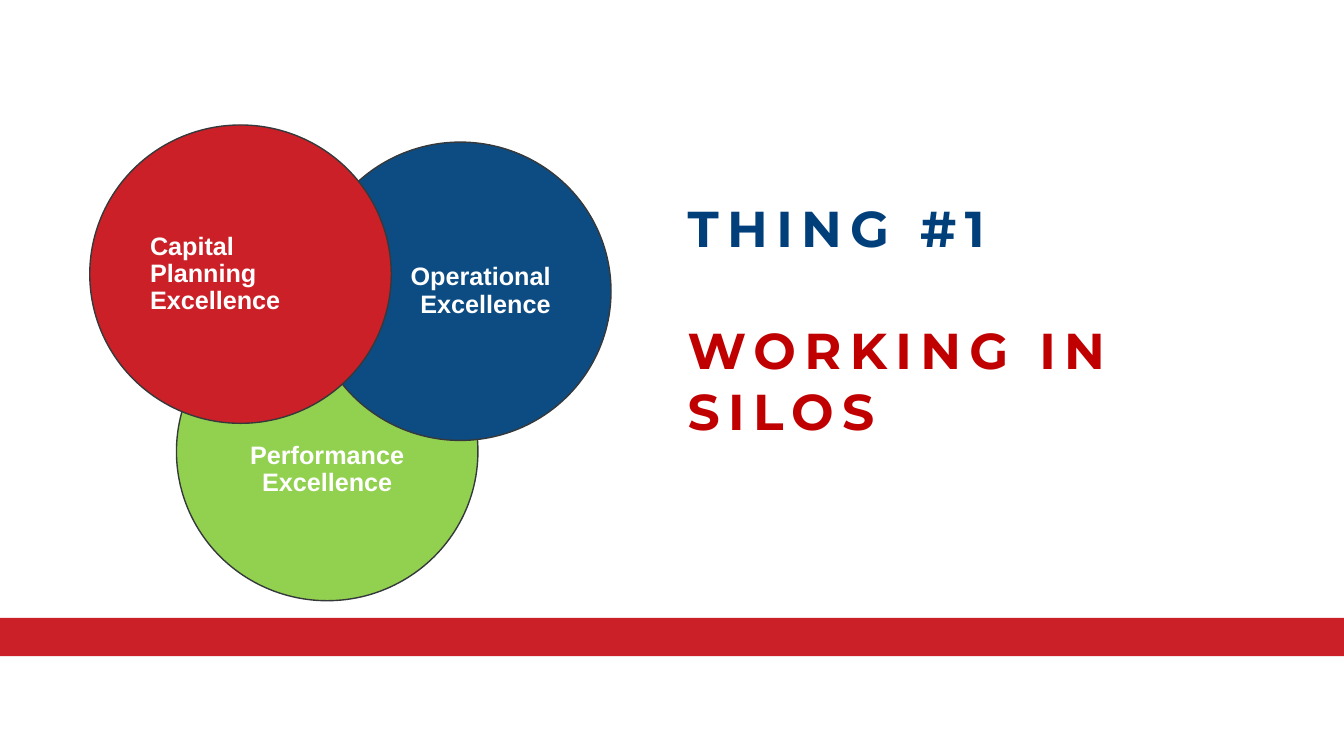
from pptx import Presentation
from pptx.dml.color import RGBColor
from pptx.enum.shapes import MSO_SHAPE
from pptx.enum.text import MSO_ANCHOR, PP_ALIGN
from pptx.util import Inches, Pt

OVAL, RECTANGLE = MSO_SHAPE.OVAL, MSO_SHAPE.RECTANGLE
MIDDLE, BOTTOM = MSO_ANCHOR.MIDDLE, MSO_ANCHOR.BOTTOM
LEFT, CENTER, RIGHT = PP_ALIGN.LEFT, PP_ALIGN.CENTER, PP_ALIGN.RIGHT

RED, OUTLINE, WHITE = "CB2027", "36393B", "FFFFFF"
HEADING = [("THING #1", "013F7A"), ("WORKING IN SILOS", "C00000")]
CIRCLES = [
    ("Performance Excellence", 1.75, 3.0, "92D050", CENTER, 0.37),
    ("Operational Excellence", 3.07, 1.41, "0D4C82", RIGHT, 0),
    ("Capital Planning Excellence", 0.89, 1.24, RED, LEFT, 0),
]
CIRCLE_WIDTH, CIRCLE_HEIGHT, CIRCLE_INSET = 2.99, 2.96, 0.16
HEADING_SIZE, HEADING_GAP = 36, 44


def color(hex_value):
    return RGBColor.from_string(hex_value)


def set_frame(frame, anchor, inset=0, extra_top=0):
    frame.word_wrap = True
    frame.vertical_anchor = anchor
    frame.margin_left = frame.margin_right = frame.margin_bottom = Inches(inset)
    frame.margin_top = Inches(inset + extra_top)


def write(paragraph, text, *, size, font, fill, align=LEFT, line=1.0, before=0, tracking=0):
    paragraph.alignment = align
    paragraph.line_spacing = line
    if before:
        paragraph.space_before = Pt(before)
    run = paragraph.add_run()
    run.text = text
    run.font.size = Pt(size)
    run.font.name = font
    run.font.bold = True
    run.font.color.rgb = color(fill)
    if tracking:
        run._r.get_or_add_rPr().set("spc", str(tracking * 100))


def add_filled(slide, kind, left, top, width, height, fill, outline=None):
    shape = slide.shapes.add_shape(
        kind, Inches(left), Inches(top), Inches(width), Inches(height))
    shape.shadow.inherit = False
    shape.fill.solid()
    shape.fill.fore_color.rgb = color(fill)
    if outline:
        shape.line.color.rgb = color(outline)
        shape.line.width = Pt(1)
    else:
        shape.line.fill.background()
    return shape


def main():
    deck = Presentation()
    deck.slide_width, deck.slide_height = Inches(13.33), Inches(7.5)
    slide = deck.slides.add_slide(deck.slide_layouts[6])

    add_filled(slide, RECTANGLE, 0, 6.13, 13.33, 0.38, RED)

    heading = slide.shapes.add_textbox(
        Inches(6.82), Inches(1.64), Inches(5.29), Inches(2.73)).text_frame
    set_frame(heading, BOTTOM)
    for index, (text, fill) in enumerate(HEADING):
        paragraph = heading.add_paragraph() if index else heading.paragraphs[0]
        write(paragraph, text, size=HEADING_SIZE, font="Montserrat", fill=fill,
              before=HEADING_GAP * index, tracking=6)

    for text, left, top, fill, align, extra_top in CIRCLES:
        circle = add_filled(slide, OVAL, left, top, CIRCLE_WIDTH, CIRCLE_HEIGHT, fill, OUTLINE)
        set_frame(circle.text_frame, MIDDLE, CIRCLE_INSET, extra_top)
        write(circle.text_frame.paragraphs[0], text, size=18, font="Arial",
              fill=WHITE, align=align, line=0.9)

    deck.save("out.pptx")


if __name__ == "__main__":
    main()
